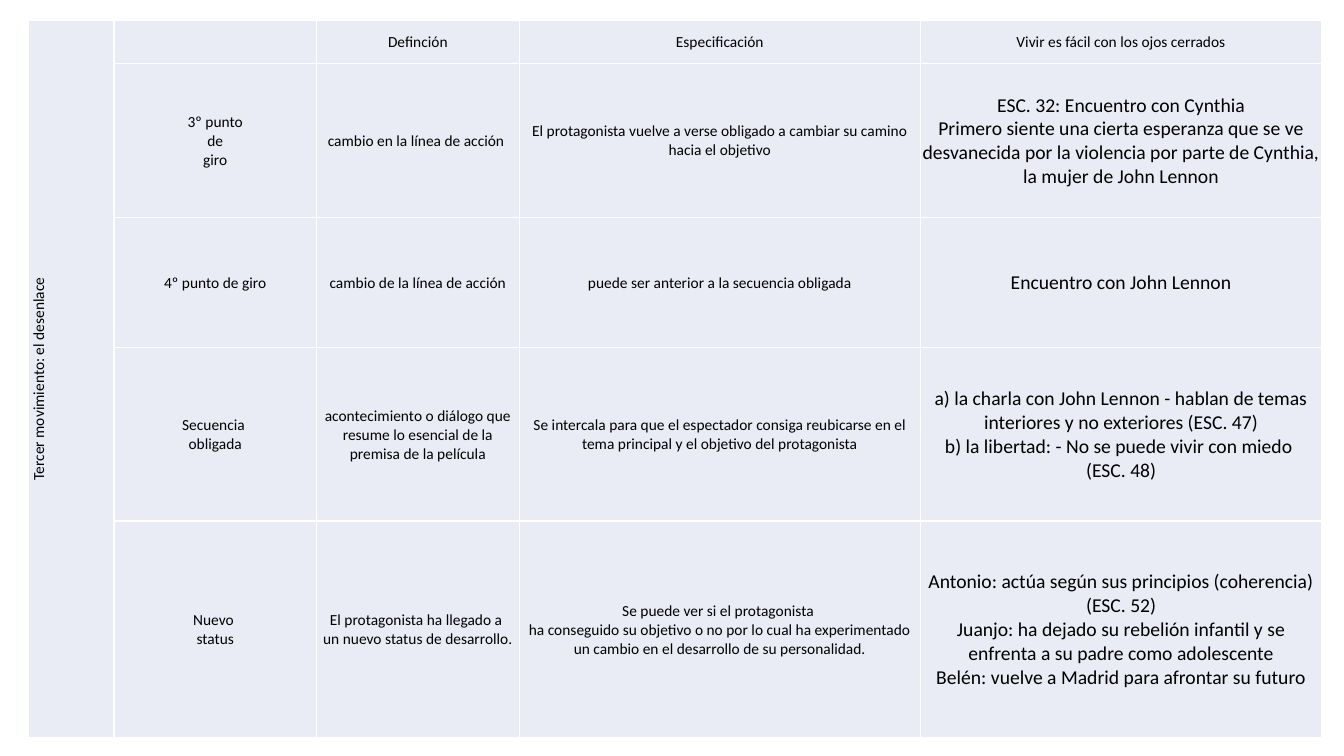
from lxml.etree import SubElement
from pptx import Presentation
from pptx.dml.color import RGBColor
from pptx.enum.text import MSO_ANCHOR, PP_ALIGN
from pptx.oxml.ns import qn
from pptx.util import Inches, Pt

BLACK = RGBColor(0x00, 0x00, 0x00)
WHITE = RGBColor(0xFF, 0xFF, 0xFF)
LAVENDER = RGBColor(0xE9, 0xEB, 0xF5)

COLUMN_WIDTHS = [0.85, 2.01, 2.01, 3.98, 3.98]
ROW_HEIGHTS = [0.43, 1.53, 1.29, 1.72, 2.15]
MOVEMENT = "Tercer movimiento: el desenlace"
ROWS = [
    ["", "Definción", "Especificación", "Vivir es fácil con los ojos cerrados"],
    [
        "3º punto\nde\ngiro",
        "cambio en la línea de acción ",
        "El protagonista vuelve a verse obligado a cambiar su camino hacia el objetivo",
        "ESC. 32: Encuentro con Cynthia\n"
        "Primero siente una cierta esperanza que se ve desvanecida por la violencia "
        "por parte de Cynthia, la mujer de John Lennon",
    ],
    [
        "4º punto de giro",
        "cambio de la línea de acción",
        "puede ser anterior a la secuencia obligada",
        "Encuentro con John Lennon",
    ],
    [
        "Secuencia \nobligada",
        "acontecimiento o diálogo que resume lo esencial de la premisa de la película",
        "Se intercala para que el espectador consiga reubicarse en el tema principal "
        "y el objetivo del protagonista",
        "a) la charla con John Lennon - hablan de temas interiores y no exteriores (ESC. 47)\n"
        "b) la libertad: - No se puede vivir con miedo \n(ESC. 48)",
    ],
    [
        "Nuevo \nstatus",
        "El protagonista ha llegado a \nun nuevo status de desarrollo.",
        "Se puede ver si el protagonista \n"
        "ha conseguido su objetivo o no por lo cual ha experimentado un cambio "
        "en el desarrollo de su personalidad.",
        "Antonio: actúa según sus principios (coherencia) (ESC. 52)\n"
        "Juanjo: ha dejado su rebelión infantil y se enfrenta a su padre como adolescente\n"
        "Belén: vuelve a Madrid para afrontar su futuro",
    ],
]


def write_text(cell, text, size=11, color=BLACK, font="Calibri", align=PP_ALIGN.CENTER):
    """Write text into a cell, one paragraph per line."""
    cell.text = text
    for paragraph in cell.text_frame.paragraphs:
        paragraph.alignment = align
        paragraph.font.size = Pt(size)
        for run in paragraph.runs:
            run.font.name = font
            run.font.size = Pt(size)
            run.font.bold = False
            run.font.color.rgb = color


def style_cell(cell):
    """Give a cell its margins, white borders and fill."""
    cell.margin_left = cell.margin_right = cell.margin_top = Inches(0.01)
    cell.margin_bottom = Inches(0)
    cell.vertical_anchor = MSO_ANCHOR.MIDDLE
    properties = cell._tc.get_or_add_tcPr()
    for side in ("lnL", "lnR", "lnT", "lnB"):
        border = SubElement(properties, qn(f"a:{side}"), w=str(Pt(1)))
        border_fill = SubElement(border, qn("a:solidFill"))
        SubElement(border_fill, qn("a:srgbClr"), val=str(WHITE))
    cell.fill.solid()
    cell.fill.fore_color.rgb = LAVENDER


def add_movement_table(slide):
    """Add the table of the third movement."""
    table = slide.shapes.add_table(
        len(ROW_HEIGHTS), len(COLUMN_WIDTHS), Inches(0.28), Inches(0.2),
        Inches(sum(COLUMN_WIDTHS)), Inches(sum(ROW_HEIGHTS)),
    ).table
    for column, width in zip(table.columns, COLUMN_WIDTHS):
        column.width = Inches(width)
    for row, height in zip(table.rows, ROW_HEIGHTS):
        row.height = Inches(height)
    for cell in table.iter_cells():
        style_cell(cell)

    movement_cell = table.cell(0, 0)
    movement_cell.merge(table.cell(len(ROW_HEIGHTS) - 1, 0))
    write_text(movement_cell, MOVEMENT)
    movement_cell._tc.get_or_add_tcPr().set("vert", "vert270")

    last_column = len(COLUMN_WIDTHS) - 1
    for row_index, texts in enumerate(ROWS):
        for column_index, text in enumerate(texts, start=1):
            is_film_note = row_index > 0 and column_index == last_column
            write_text(table.cell(row_index, column_index), text, size=14 if is_film_note else 11)


def main():
    """Build and save the presentation."""
    presentation = Presentation()
    presentation.slide_width = Inches(13.33)
    presentation.slide_height = Inches(7.5)
    slide = presentation.slides.add_slide(presentation.slide_layouts[6])
    add_movement_table(slide)
    presentation.save("out.pptx")


if __name__ == "__main__":
    main()
